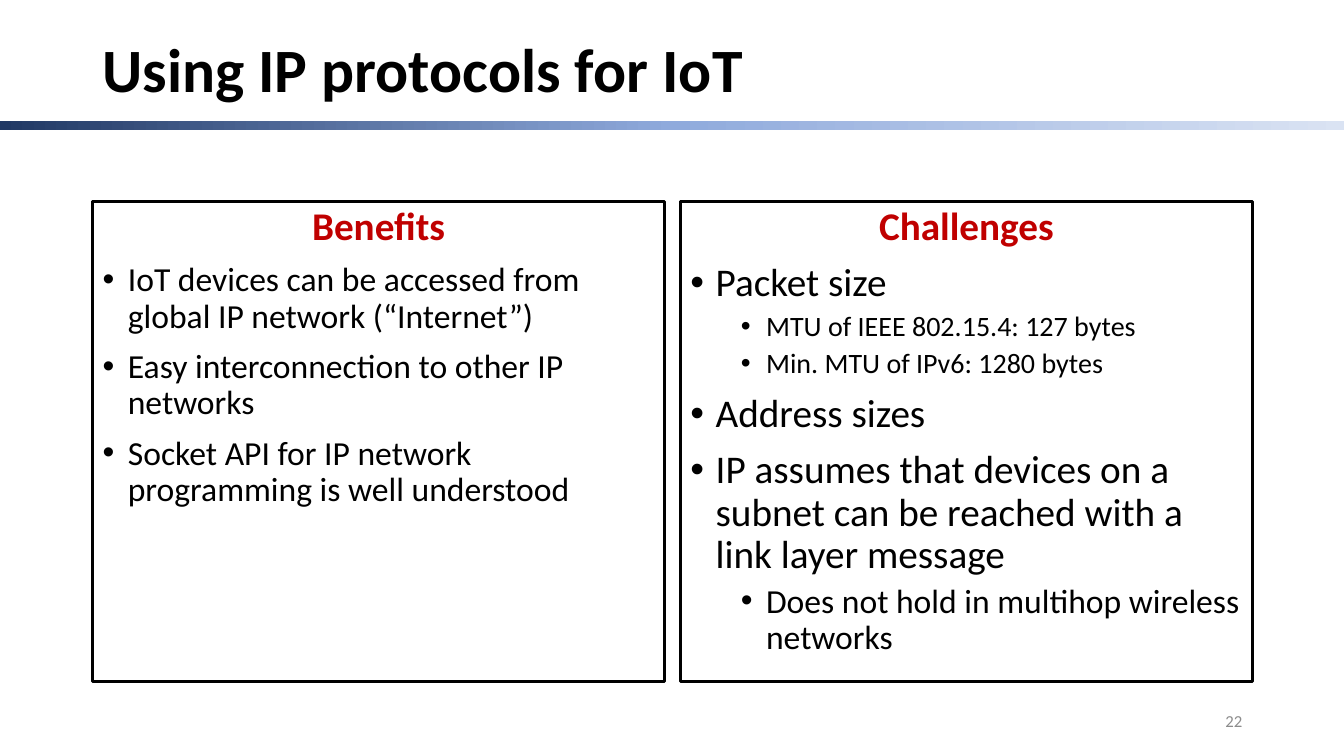
import copy
import lxml.etree
import pptx
import pptx.dml.color
import pptx.enum.shapes
import pptx.enum.text
import pptx.oxml.ns
import pptx.util

PX = 9144  # EMU in one px, 100 px to the inch
WIDE, HIGH = 1333, 750
ALIGN = pptx.enum.text.PP_ALIGN
ANCHOR = pptx.enum.text.MSO_ANCHOR
BLACK, RED, GREY = "000000", "C00000", "8C8C8C"
LEFT, GAP, BOX = 92, 16, 567

# Each panel: heading, then (level, size, text)
PANELS = [
    ("Benefits", [
        (0, 24, "IoT devices can be accessed from global IP network (“Internet”)"),
        (0, 24, "Easy interconnection to other IP networks"),
        (0, 24, "Socket API for IP network programming is well understood"),
    ]),
    ("Challenges", [
        (0, 28, "Packet size"),
        (1, 20, "MTU of IEEE 802.15.4: 127 bytes"),
        (1, 20, "Min. MTU of IPv6: 1280 bytes"),
        (0, 28, "Address sizes"),
        (0, 28, "IP assumes that devices on a subnet can be reached with a link layer message"),
        (1, 24, "Does not hold in multihop wireless networks"),
    ]),
]


def color(code):
    return pptx.dml.color.RGBColor.from_string(code)


def apply(target, form):
    for name, value in form.items():
        setattr(target, name, value)


class Deck:
    def __init__(self, font):
        self.font = font
        self.show = pptx.Presentation()
        apply(self.show, {"slide_width": WIDE * PX, "slide_height": HIGH * PX})
        self.slide = self.show.slides.add_slide(self.show.slide_layouts[6])

    def rect(self, x, y, w, h):
        kind = pptx.enum.shapes.MSO_SHAPE.RECTANGLE
        shape = self.slide.shapes.add_shape(kind, x * PX, y * PX, w * PX, h * PX)
        shape.shadow.inherit = False
        return shape

    def band(self, x, y, w, h, stops):
        """Draw a bar with a left-to-right gradient of (position, colour) stops."""
        bar = self.rect(x, y, w, h)
        bar.line.fill.background()
        bar.fill.gradient()
        bar.fill.gradient_angle = 0
        group = next(bar.element.iter(pptx.oxml.ns.qn("a:gsLst")))
        while len(group) < len(stops):
            group.append(copy.deepcopy(group[0]))
        for stop, (place, code) in zip(bar.fill.gradient_stops, stops):
            stop.position = place
            stop.color.rgb = color(code)

    def fill_in(self, para, text, size, code, bold=False, **form):
        """Put one styled run into a paragraph and set the paragraph's format."""
        apply(para, form)
        run = para.add_run()
        run.text = text
        apply(run.font, {"name": self.font, "size": pptx.util.Pt(size), "bold": bold})
        run.font.color.rgb = color(code)

    def label(self, x, y, w, h, text, size, code, **form):
        box = self.slide.shapes.add_textbox(x * PX, y * PX, w * PX, h * PX)
        frame = box.text_frame
        apply(frame, {"word_wrap": True, "vertical_anchor": ANCHOR.MIDDLE})
        self.fill_in(frame.paragraphs[0], text, size, code, **form)

    def bullet(self, para, level):
        props = para._p.get_or_add_pPr()
        props.set("marL", str((25 + 50 * level) * PX))
        props.set("indent", str(-25 * PX))
        for tag, key, value in (("a:buFont", "typeface", "Arial"), ("a:buChar", "char", "•")):
            lxml.etree.SubElement(props, pptx.oxml.ns.qn(tag)).set(key, value)

    def panel(self, x, y, w, h, head, items):
        box = self.rect(x, y, w, h)
        box.fill.background()
        box.line.color.rgb = color(BLACK)
        box.line.width = pptx.util.Pt(2.25)
        frame = box.text_frame
        apply(frame, {"word_wrap": True, "vertical_anchor": ANCHOR.TOP})
        self.fill_in(frame.paragraphs[0], head, 28, RED, bold=True,
                     alignment=ALIGN.CENTER, line_spacing=0.9, space_before=pptx.util.Pt(10))
        for level, size, text in items:
            para = frame.add_paragraph()
            self.fill_in(para, text, size, BLACK, level=level, alignment=ALIGN.LEFT,
                         line_spacing=0.9, space_before=pptx.util.Pt(5 if level else 10))
            self.bullet(para, level)


def main():
    deck = Deck("Calibri")
    deck.band(0, 120, WIDE, 9, [(0, "203864"), (0.5, "8FAADC"), (1, "DAE3F3")])
    deck.label(LEFT, 20, 1150, 104, "Using IP protocols for IoT", 44, BLACK,
               bold=True, line_spacing=0.9)
    for i, (head, items) in enumerate(PANELS):
        deck.panel(LEFT + i * (BOX + GAP), 200, BOX, 476, head, items)
    deck.label(942, 695, 300, 40, "22", 12, GREY, alignment=ALIGN.RIGHT)
    deck.show.save("out.pptx")


if __name__ == "__main__":
    main()
